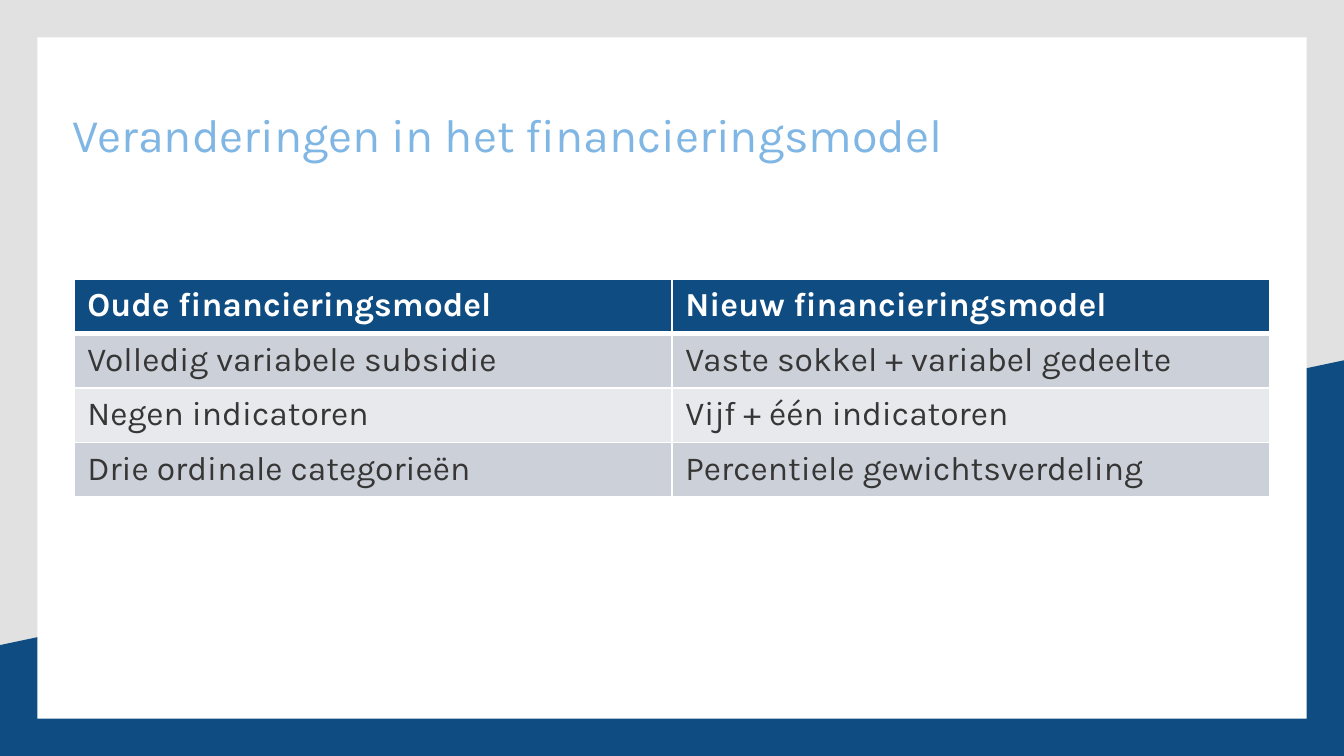
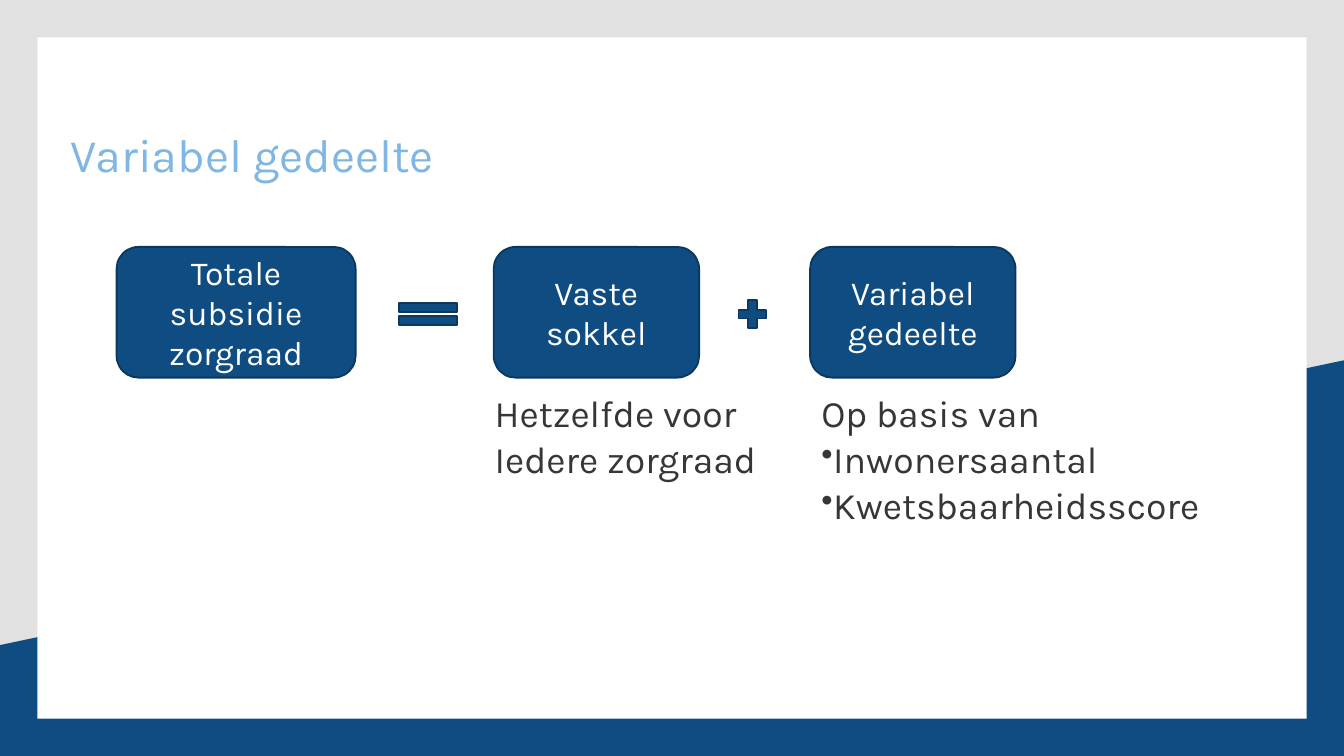
import pptx
import pptx.dml.color
import pptx.enum.shapes
import pptx.enum.text
import pptx.oxml.ns
import pptx.util
import lxml.etree

Pt = pptx.util.Pt
SHAPES = pptx.enum.shapes.MSO_SHAPE
WIDTH, HEIGHT = 720, 405
FONT = "Karla"
COLOURS = {
    "background": "E1E1E1",
    "blue": "0F4C81",
    "outline": "0B385F",
    "title": "80B6E4",
    "text": "373636",
    "white": "FFFFFF",
    "band_dark": "CCD0D8",
    "band_light": "E7E9ED",
}


def colour(name):
    return pptx.dml.color.RGBColor.from_string(COLOURS[name])


def fill(target, name):
    target.fill.solid()
    target.fill.fore_color.rgb = colour(name)


def add_element(parent, tag, **attributes):
    element = lxml.etree.SubElement(parent, pptx.oxml.ns.qn(tag))
    for key, value in attributes.items():
        element.set(key, str(value))
    return element


def format_runs(paragraph, size, colour_name, bold=False):
    for run in paragraph.runs:
        run.font.name = FONT
        run.font.size = Pt(size)
        run.font.bold = bold
        run.font.color.rgb = colour(colour_name)


def style_shape(shape, fill_name, line_name=None):
    shape.shadow.inherit = False
    fill(shape, fill_name)
    if line_name:
        shape.line.color.rgb = colour(line_name)
        shape.line.width = Pt(1)
    else:
        shape.line.fill.background()


def add_shape(slide, kind, box, fill_name, line_name=None):
    shape = slide.shapes.add_shape(kind, *map(Pt, box))
    style_shape(shape, fill_name, line_name)
    return shape


def add_text(slide, box, lines, size, colour_name, space=0, bulleted_from=None):
    frame = slide.shapes.add_textbox(*map(Pt, box)).text_frame
    frame.word_wrap = True
    frame.margin_left = frame.margin_right = 0
    frame.margin_top = frame.margin_bottom = 0
    frame.text = "\n".join(lines)
    for index, paragraph in enumerate(frame.paragraphs):
        paragraph.line_spacing = 0.9
        if index:
            paragraph.space_before = Pt(space)
        if bulleted_from is not None and index >= bulleted_from:
            properties = paragraph._p.get_or_add_pPr()
            add_element(properties, "a:buSzPct", val=90000)
            add_element(properties, "a:buChar", char="•")
        format_runs(paragraph, size, colour_name)


def add_framed_slide(presentation, title, left, top):
    slide = presentation.slides.add_slide(presentation.slide_layouts[6])
    fill(slide.background, "background")
    builder = slide.shapes.build_freeform(Pt(WIDTH), Pt(193))
    corners = [(WIDTH, HEIGHT), (0, HEIGHT), (0, 345.6)]
    builder.add_line_segments([(Pt(x), Pt(y)) for x, y in corners])
    style_shape(builder.convert_to_shape(), "blue")
    add_shape(slide, SHAPES.RECTANGLE, (20, 20, WIDTH - 40, HEIGHT - 40), "white")
    add_text(slide, (left, top, 471, 50.4), [title], 25, "title")
    return slide


def add_cell_borders(cell, bottom_width):
    properties = cell._tc.get_or_add_tcPr()
    widths = {"a:lnL": 1, "a:lnR": 1, "a:lnT": 1, "a:lnB": bottom_width}
    for tag, width in widths.items():
        line = add_element(properties, tag, w=Pt(width))
        add_element(add_element(line, "a:solidFill"), "a:srgbClr", val=COLOURS["white"])


def add_comparison_table(slide, box, rows):
    shape = slide.shapes.add_table(len(rows), len(rows[0]), *map(Pt, box))
    for row_index, texts in enumerate(rows):
        header = row_index == 0
        band = "blue" if header else ("band_light", "band_dark")[row_index % 2]
        for column_index, text in enumerate(texts):
            cell = shape.table.cell(row_index, column_index)
            cell.text_frame.text = text
            add_cell_borders(cell, 3 if header else 1)
            fill(cell, band)
            text_colour = "white" if header else "text"
            format_runs(cell.text_frame.paragraphs[0], 18, text_colour, header)


def add_term(slide, box, text):
    shape = add_shape(slide, SHAPES.ROUNDED_RECTANGLE, box, "blue", "outline")
    frame = shape.text_frame
    frame.word_wrap = True
    frame.vertical_anchor = pptx.enum.text.MSO_ANCHOR.MIDDLE
    frame.text = text
    frame.paragraphs[0].alignment = pptx.enum.text.PP_ALIGN.CENTER
    format_runs(frame.paragraphs[0], 18, "white")


def add_formula(slide, box):
    left, top, width, height = box
    terms = [
        (0, 128, "Totale subsidie zorgraad"),
        (202, 110, "Vaste sokkel"),
        (width - 110, 110, "Variabel gedeelte"),
    ]
    for offset, term_width, text in terms:
        add_term(slide, (left + offset, top, term_width, height), text)
    operators = [(SHAPES.MATH_EQUAL, 145.5, 42.5), (SHAPES.MATH_PLUS, 330.5, 20)]
    for kind, offset, operator_width in operators:
        operator_box = (left + offset, top + 26, operator_width, 20)
        add_shape(slide, kind, operator_box, "blue", "outline")


def add_explanations(slide, box):
    left, top, width, height = box
    split = 175
    add_text(slide, (left, top, split - 10, height),
             ["Hetzelfde voor", "Iedere zorgraad"], 20, "text", 3)
    add_text(slide, (left + split, top, width - split, height),
             ["Op basis van", "Inwonersaantal", "Kwetsbaarheidsscore"],
             20, "text", 3, bulleted_from=1)


def build_changes_slide(presentation):
    slide = add_framed_slide(
        presentation, "Veranderingen in het financieringsmodel", 39, 60)
    add_comparison_table(slide, (39.6, 149.4, 640.8, 116.8), [
        ("Oude financieringsmodel", "Nieuw financieringsmodel"),
        ("Volledig variabele subsidie", "Vaste sokkel + variabel gedeelte"),
        ("Negen indicatoren", "Vijf + één indicatoren"),
        ("Drie ordinale categorieën", "Percentiele gewichtsverdeling"),
    ])


def build_variable_part_slide(presentation):
    slide = add_framed_slide(presentation, "Variabel gedeelte", 38, 71)
    add_formula(slide, (62.5, 132.3, 481.5, 70))
    add_explanations(slide, (265, 211.7, 415, 160))


def main():
    presentation = pptx.Presentation()
    presentation.slide_width = Pt(WIDTH)
    presentation.slide_height = Pt(HEIGHT)
    build_changes_slide(presentation)
    build_variable_part_slide(presentation)
    presentation.save("out.pptx")


if __name__ == "__main__":
    main()
